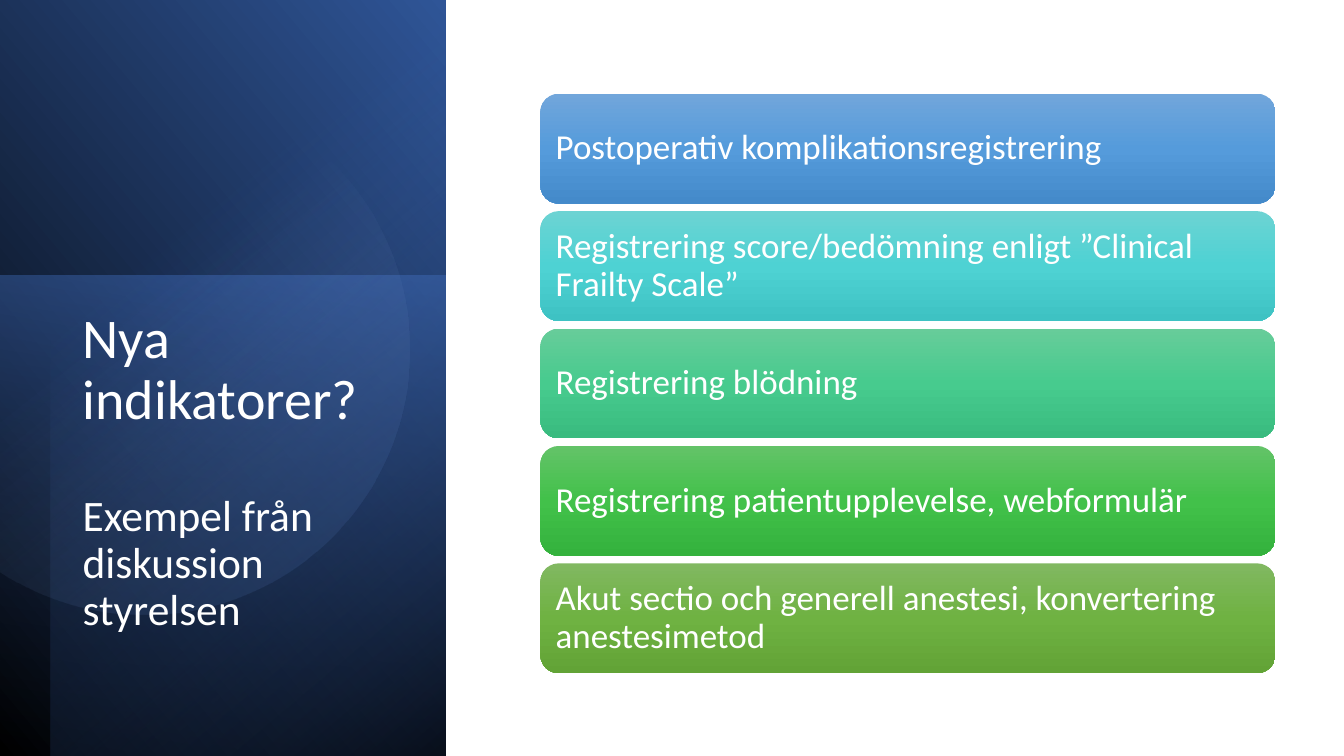
import math
from lxml import etree
from pptx import Presentation
from pptx import util as u
from pptx.dml.color import RGBColor
from pptx.enum import shapes, text
from pptx.oxml import ns

# Slide size and colours
WIDE, HIGH = u.Inches(13.33), u.Inches(7.5)
FONT = "Calibri"
WHITE = RGBColor(0xFF, 0xFF, 0xFF)
BLACK = RGBColor(0x00, 0x00, 0x00)
BLUE = RGBColor(0x44, 0x72, 0xC4)
DEEP = RGBColor(0x2F, 0x55, 0x97)
NAVY = RGBColor(0x20, 0x38, 0x64)
PALE = RGBColor(0x8F, 0xAA, 0xDC)

# Each bar: wording, then top, middle and bottom colour
BARS = [
    ("Postoperativ komplikationsregistrering",
     RGBColor(0x71, 0xA6, 0xDB), RGBColor(0x55, 0x9B, 0xDB), RGBColor(0x44, 0x8A, 0xCA)),
    ("Registrering score/bedömning enligt ”Clinical Frailty Scale”",
     RGBColor(0x6C, 0xD3, 0xD3), RGBColor(0x4E, 0xD2, 0xD3), RGBColor(0x3E, 0xC2, 0xC3)),
    ("Registrering blödning",
     RGBColor(0x67, 0xCC, 0x9A), RGBColor(0x47, 0xCB, 0x8E), RGBColor(0x39, 0xBB, 0x7F)),
    ("Registrering patientupplevelse, webformulär",
     RGBColor(0x63, 0xC3, 0x68), RGBColor(0x42, 0xC1, 0x4A), RGBColor(0x34, 0xB2, 0x3D)),
    ("Akut sectio och generell anestesi, konvertering anestesimetod",
     RGBColor(0x81, 0xB8, 0x61), RGBColor(0x6F, 0xB2, 0x42), RGBColor(0x62, 0xA3, 0x36)),
]


def area(left, top, width, height):
    """Turn percentages of the slide into lengths."""
    return [round(part * full / 100) for part, full in
            zip((left, top, width, height), (WIDE, HIGH, WIDE, HIGH))]


def shade(shape, angle, *stops):
    """Fill with a gradient of (place, colour, opacity) and drop the outline."""
    shape.shadow.inherit = False
    shape.line.fill.background()
    shape.fill.background()
    grad = etree.Element(ns.qn("a:gradFill"), rotWithShape="1")
    row = etree.SubElement(grad, ns.qn("a:gsLst"))
    for place, color, solid in stops:
        stop = etree.SubElement(row, ns.qn("a:gs"), pos=str(place * 1000))
        tint = etree.SubElement(stop, ns.qn("a:srgbClr"), val=str(color))
        etree.SubElement(tint, ns.qn("a:alpha"), val=str(solid * 1000))
    etree.SubElement(grad, ns.qn("a:lin"), ang=str(round(angle * 60000)), scaled="0")
    props = shape._element.spPr
    props.replace(props.find(ns.qn("a:noFill")), grad)


def write(para, words, size):
    para.line_spacing = 0.9
    para.alignment = text.PP_ALIGN.LEFT
    run = para.add_run()
    run.text = words
    run.font.name, run.font.size = FONT, u.Pt(size)
    run.font.color.rgb = WHITE


def add_veil(slide, box, turn, flip, angle, *stops):
    """Add a rectangle, turned a quarter, that covers the given box."""
    left, top, width, height = box
    shift = (width - height) // 2
    veil = slide.shapes.add_shape(shapes.MSO_SHAPE.RECTANGLE,
                                  left + shift, top - shift, height, width)
    veil.rotation = turn
    if flip:
        veil._element.spPr.xfrm.set("flipH", "1")
    shade(veil, angle, *stops)


def add_disc(slide):
    """Add the circle that is cut off by the left edge of the slide."""
    mid_x, mid_y, radius, _ = area(10.73, 46.27, 19.73, 0)
    cut = math.acos(-mid_x / radius)
    steps = 120
    turns = [cut * (2 * i / steps - 1) for i in range(steps + 1)]
    dots = [(round(mid_x + radius * math.cos(t)), round(mid_y + radius * math.sin(t)))
            for t in turns]
    pen = slide.shapes.build_freeform(*dots[0])
    pen.add_line_segments(dots[1:], close=True)
    shade(pen.convert_to_shape(), 51.6, (39, PALE, 0), (100, DEEP, 26))


def add_panel(slide):
    add_veil(slide, area(0, 0, 33.16, 100), 90, True, 310,
             (0, BLACK, 100), (100, DEEP, 100))
    add_veil(slide, area(0, 36.4, 33.16, 63.6), 270, False, 190,
             (0, BLUE, 50), (100, NAVY, 0))
    add_veil(slide, area(3.76, 0, 29.4, 100), 270, True, 220,
             (0, BLACK, 59), (69, BLUE, 0))
    add_disc(slide)


def add_title(slide):
    title = slide.shapes.title
    title.left, title.top, title.width, title.height = area(5.4, 40.4, 23.63, 44.8)
    frame = title.text_frame
    frame.word_wrap = True
    frame.auto_size = text.MSO_AUTO_SIZE.NONE
    frame.vertical_anchor = text.MSO_ANCHOR.TOP
    write(frame.paragraphs[0], "Nya indikatorer?", 40)
    lower = frame.add_paragraph()
    lower.space_before = u.Pt(45)
    write(lower, "Exempel från diskussion styrelsen", 31)
    # Bring the title in front of the panel
    slide.shapes._spTree.append(title._element)


def add_bar(slide, row, words, *colors):
    box = area(40.21, 12.4 + 15.53 * row, 54.69, 14.53)
    bar = slide.shapes.add_shape(shapes.MSO_SHAPE.ROUNDED_RECTANGLE, *box)
    shade(bar, 90, *[(50 * i, color, 100) for i, color in enumerate(colors)])
    frame = bar.text_frame
    frame.word_wrap = True
    frame.vertical_anchor = text.MSO_ANCHOR.MIDDLE
    frame.margin_left = frame.margin_right = u.Inches(0.1)
    frame.margin_top = frame.margin_bottom = u.Inches(0.1)
    write(frame.paragraphs[0], words, 25)


def main():
    deck = Presentation()
    deck.slide_width, deck.slide_height = WIDE, HIGH
    slide = deck.slides.add_slide(deck.slide_layouts[5])
    # Left panel with the title
    add_panel(slide)
    add_title(slide)
    # Bars on the right
    for row, bar in enumerate(BARS):
        add_bar(slide, row, *bar)
    deck.save("out.pptx")


if __name__ == "__main__":
    main()
